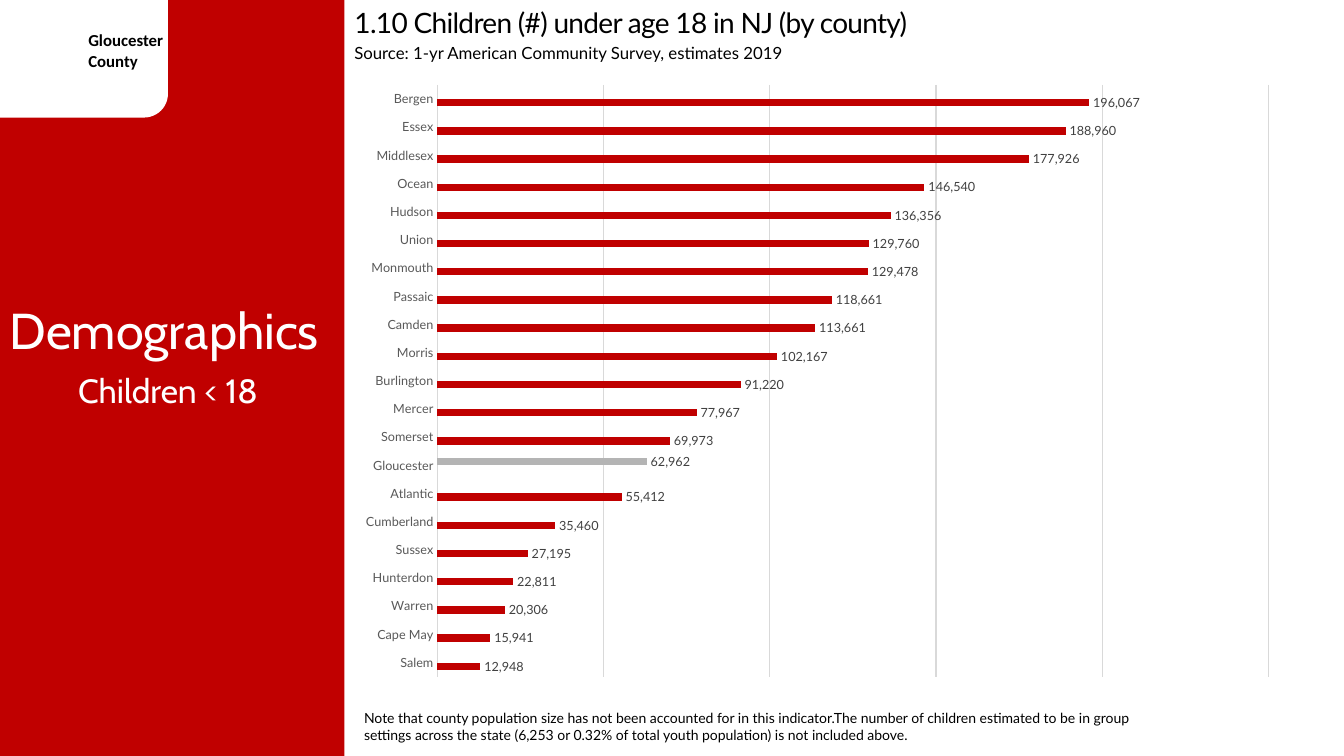
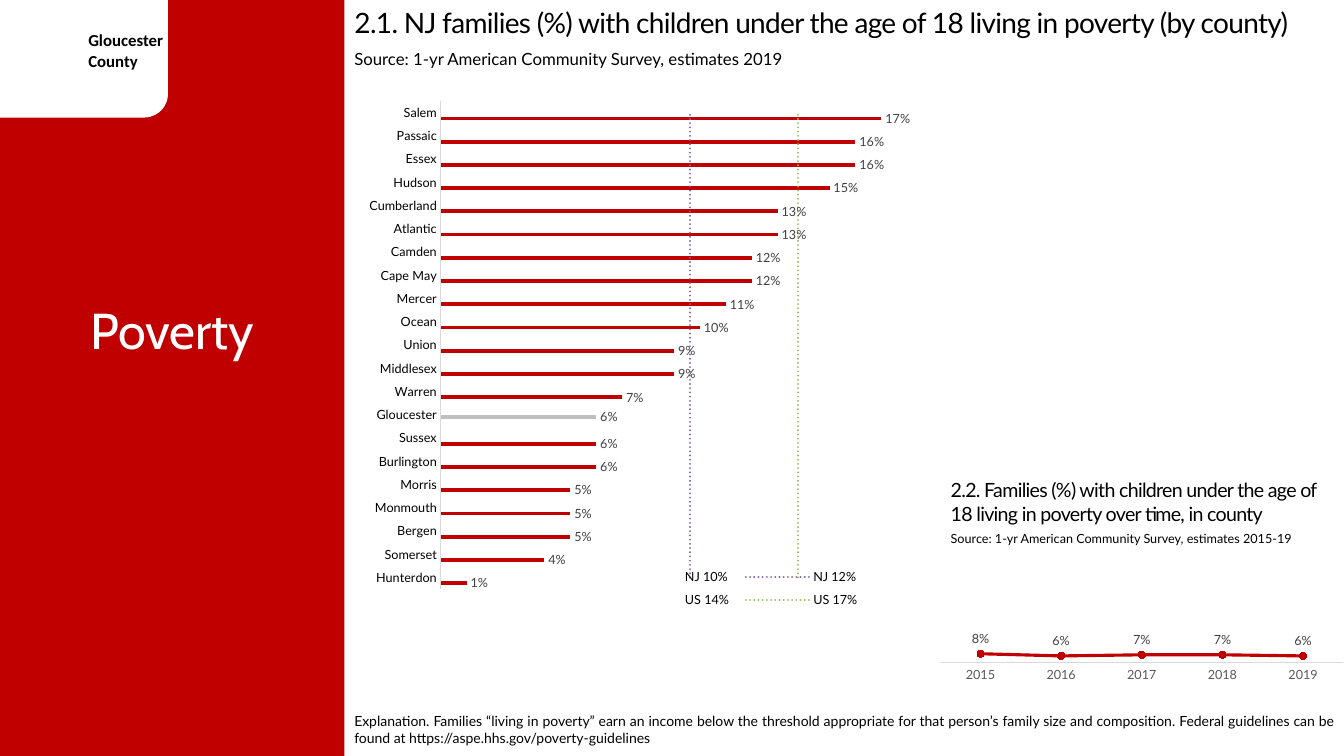
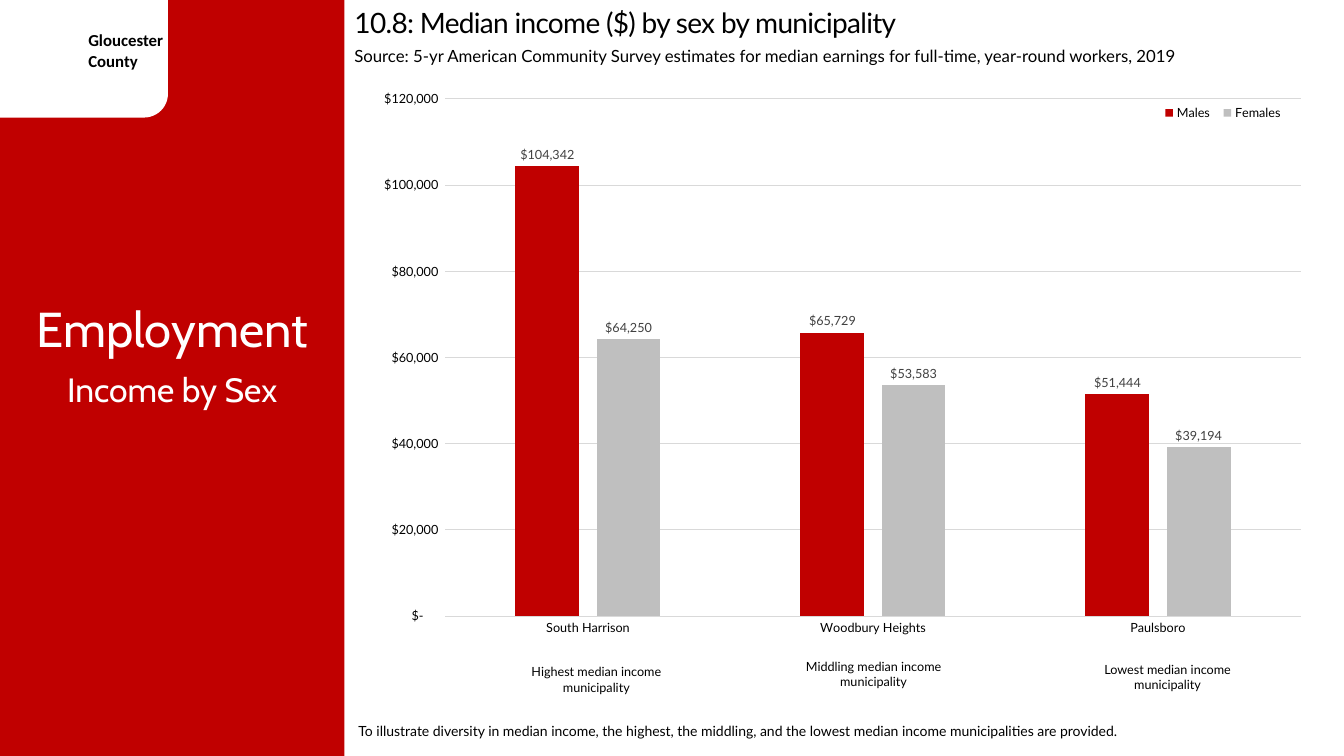
import pptx
import pptx.chart.data
import pptx.dml.color
import pptx.enum.chart
import pptx.enum.shapes
import pptx.enum.text
import pptx.oxml
import pptx.oxml.ns
import pptx.util

Pt = pptx.util.Pt
Kind = pptx.enum.chart.XL_CHART_TYPE
Spot = pptx.enum.chart.XL_LABEL_POSITION
Mark = pptx.enum.chart.XL_TICK_MARK
Form = pptx.enum.shapes.MSO_SHAPE
Align = pptx.enum.text.PP_ALIGN
Anchor = pptx.enum.text.MSO_ANCHOR
qn = pptx.oxml.ns.qn

COLORS = {
    "red": "C00000", "white": "FFFFFF", "black": "000000",
    "gray": "BFBFBF", "silver": "B4B4B4", "rule": "D9D9D9",
    "label": "404040", "axis": "595959", "green": "9BBB59", "purple": "8064A2",
}
MONEY = '_("$"* #,##0_);_("$"* \\(#,##0\\);_("$"* "-"??_);_(@_)'
SIDE = 246


def rgb(name):
    return pptx.dml.color.RGBColor.from_string(COLORS[name])


def xml(text):
    return pptx.oxml.parse_xml(text.replace(">", " " + pptx.oxml.ns.nsdecls("c", "a") + ">", 1))


def layout(box, inner=False):
    """Chart layout element for left, top, width, height as shares of the chart."""
    goal = '<c:layoutTarget val="inner"/>' if inner else ""
    modes = '<c:xMode val="edge"/><c:yMode val="edge"/>'
    sizes = "".join(f'<c:{tag} val="{val}"/>' for tag, val in zip("xywh", box))
    return xml(f"<c:layout><c:manualLayout>{goal}{modes}{sizes}</c:manualLayout></c:layout>")


def clear(node, tag):
    for old in node.findall(qn(tag)):
        node.remove(old)


class Deck:
    def __init__(self):
        self.show = pptx.Presentation()
        self.show.slide_width, self.show.slide_height = Pt(960), Pt(540)
        self.base = self.show.slide_layouts[5]
        self.slide = None

    def page(self, topic, heading, size=36, align=Align.CENTER):
        self.slide = self.show.slides.add_slide(self.base)
        if len(self.show.slides) == 1:
            self.frame()
        self.text(topic, (0, 210, SIDE, 51), size, "Cabin", "white", align)
        title = self.slide.shapes.title
        title.left, title.top, title.width, title.height = map(Pt, (SIDE, 0, 714, 32))
        self.style(title, heading, 20, tight=True)

    def frame(self):
        """Draw the side band and county tab, and move them to the layout."""
        parts = [
            self.shape(Form.RECTANGLE, (0, 0, SIDE, 540), "red"),
            self.shape(Form.ROUNDED_RECTANGLE, (-24, -18, 144, 102), "white"),
            self.text("Gloucester County", (56, 18, 70, 36), 12, "Calibri", bold=True),
        ]
        for num, part in enumerate(parts, 20):
            part._element.nvSpPr.cNvPr.set("id", str(num))
            self.base.shapes._spTree.append(part._element)

    def shape(self, form, box, fill):
        item = self.slide.shapes.add_shape(form, *map(Pt, box))
        item.shadow.inherit = False
        item.fill.solid()
        item.fill.fore_color.rgb = rgb(fill)
        item.line.fill.background()
        return item

    def text(self, words, box, *style, **more):
        item = self.slide.shapes.add_textbox(*map(Pt, box))
        self.style(item, words, *style, **more)
        return item

    def style(self, item, words, size, face="Lato", color="black", align=Align.LEFT,
              anchor=Anchor.TOP, bold=False, tight=False):
        frame = item.text_frame
        frame.word_wrap = True
        frame.auto_size = pptx.enum.text.MSO_AUTO_SIZE.NONE
        frame.vertical_anchor = anchor
        frame.text = words
        para = frame.paragraphs[0]
        para.alignment = align
        self.font(para.font, size, color, face)
        para.font.bold = bold
        if tight:
            para.font._element.set("spc", "-50")

    def font(self, font, size, color, face="Lato"):
        font.size, font.name = Pt(size), face
        font.color.rgb = rgb(color)

    def chart(self, kind, box, cats, rows, plot, top, fmt, ink="black", gap=None, overlap=0):
        """Rows hold name, values and colour; top is the end of the hidden value axis."""
        data = pptx.chart.data.CategoryChartData()
        data.categories = cats
        for name, vals, _ in rows:
            data.add_series(name, vals)
        chart = self.slide.shapes.add_chart(kind, *map(Pt, box), data).chart
        chart.has_title = chart.has_legend = False
        self.font(chart.font, 10, "black", "Calibri")
        area = chart._chartSpace.chart.plotArea
        clear(area, "c:layout")
        area.insert(0, layout(plot, True))
        line = kind == Kind.LINE_MARKERS
        graph = chart.plots[0]
        graph.vary_by_categories = False
        if not line:
            graph.gap_width, graph.overlap = gap, overlap
        for part, (_, _, color) in zip(graph.series, rows):
            if line:
                self.trace(part, color)
            else:
                part.format.fill.solid()
                part.format.fill.fore_color.rgb = rgb(color)
            if color != "white":
                tags = part.data_labels
                tags.show_value = True
                tags.number_format, tags.number_format_is_linked = fmt, False
                tags.position = Spot.ABOVE if line else Spot.OUTSIDE_END
                self.font(tags.font, 9, "label")
        base, scale = chart.category_axis, chart.value_axis
        base.major_tick_mark = scale.major_tick_mark = Mark.NONE
        base.format.line.color.rgb = rgb("rule")
        base.format.line.width = Pt(0.75)
        self.font(base.tick_labels.font, 9, ink)
        scale.minimum_scale, scale.maximum_scale = 0, top
        scale.has_major_gridlines = scale.visible = False
        return chart

    def trace(self, part, color):
        part.smooth = False
        part.format.line.color.rgb = rgb(color)
        part.format.line.width = Pt(2.25)
        part.marker.style = pptx.enum.chart.XL_MARKER_STYLE.CIRCLE
        part.marker.size = 5
        part.marker.format.fill.solid()
        part.marker.format.fill.fore_color.rgb = rgb(color)
        part.marker.format.line.color.rgb = rgb(color)

    def grid(self, axis, step):
        axis.major_unit = step
        axis.has_major_gridlines = True
        axis.major_gridlines.format.line.color.rgb = rgb("rule")
        axis.major_gridlines.format.line.width = Pt(0.75)

    def legend(self, chart, place, box, hide=()):
        chart.has_legend = True
        key = chart.legend
        key.position = place
        key.include_in_layout = False
        self.font(key.font, 9, "black")
        node = key._element
        clear(node, "c:layout")
        spot = node.find(qn("c:legendPos"))
        spot.addnext(layout(box))
        for num in reversed(hide):
            spot.addnext(xml(f'<c:legendEntry><c:idx val="{num}"/>'
                             '<c:delete val="1"/></c:legendEntry>'))

    def trend(self, part, name, color):
        part._element.find(qn("c:cat")).addprevious(xml(
            f'<c:trendline><c:name>{name}</c:name><c:spPr><a:ln w="19050" cap="rnd">'
            f'<a:solidFill><a:srgbClr val="{COLORS[color]}"/></a:solidFill>'
            '<a:prstDash val="sysDot"/></a:ln></c:spPr><c:trendlineType val="linear"/>'
            '<c:dispRSqr val="0"/><c:dispEq val="0"/></c:trendline>'))


def split(pairs, county="Gloucester"):
    """Names, values of the other counties, and values of the one county."""
    names = [name for name, _ in pairs]
    rest = [None if name == county else val for name, val in pairs]
    own = [val if name == county else None for name, val in pairs]
    return names, rest, own


def children(deck):
    deck.page("Demographics", "1.10 Children (#) under age 18 in NJ (by county)",
              align=Align.LEFT)
    deck.text("Source: 1-yr American Community Survey, estimates 2019", (SIDE, 27, 508, 22), 12)
    deck.text("Children < 18", (22, 261, 196, 36), 24, "Cabin", "white", Align.CENTER)
    names, rest, own = split([
        ("Salem", 12948), ("Cape May", 15941), ("Warren", 20306), ("Hunterdon", 22811),
        ("Sussex", 27195), ("Cumberland", 35460), ("Atlantic", 55412), ("Gloucester", 62962),
        ("Somerset", 69973), ("Mercer", 77967), ("Burlington", 91220), ("Morris", 102167),
        ("Camden", 113661), ("Passaic", 118661), ("Monmouth", 129478), ("Union", 129760),
        ("Hudson", 136356), ("Ocean", 146540), ("Middlesex", 177926), ("Essex", 188960),
        ("Bergen", 196067)])
    chart = deck.chart(
        Kind.BAR_CLUSTERED, (253, 57.5, 682.5, 456), names,
        [("Series 1", rest, "red"), ("Series 2", own, "silver")],
        (0.087, 0.007, 0.87, 0.927), 250000, "#,##0", "axis", 182)
    deck.grid(chart.value_axis, 50000)
    deck.text("Note that county population size has not been accounted for in this indicator."
              "The number of children estimated to be in group settings across the state "
              "(6,253 or 0.32% of total youth population) is not included above.",
              (253, 503, 576, 32), 10)


def poverty(deck):
    deck.page("Poverty", "2.1. NJ families (%) with children under the age of 18 "
              "living in poverty (by county)")
    deck.text("Source: 1-yr American Community Survey, estimates 2019", (SIDE, 31, 508, 22), 12)
    deck.text("Explanation. Families “living in poverty” earn an income below the threshold "
              "appropriate for that person’s family size and composition. Federal guidelines "
              "can be found at https://aspe.hhs.gov/poverty-guidelines",
              (SIDE, 503, 714, 36), 10, align=Align.JUSTIFY, anchor=Anchor.MIDDLE)
    deck.text("2.2. Families (%) with children under the age of 18 living in poverty "
              "over time, in county", (672, 338, 282, 58), 14, tight=True)
    deck.text("Source: 1-yr American Community Survey, estimates 2015-19",
              (672, 376, 288, 18), 9)
    names, rest, own = split([
        ("Hunterdon", 0.01), ("Somerset", 0.04), ("Bergen", 0.05), ("Monmouth", 0.05),
        ("Morris", 0.05), ("Burlington", 0.06), ("Sussex", 0.06), ("Gloucester", 0.06),
        ("Warren", 0.07), ("Middlesex", 0.09), ("Union", 0.09), ("Ocean", 0.1),
        ("Mercer", 0.11), ("Cape May", 0.12), ("Camden", 0.12), ("Atlantic", 0.13),
        ("Cumberland", 0.13), ("Hudson", 0.15), ("Essex", 0.16), ("Passaic", 0.16),
        ("Salem", 0.17)])
    count = len(names)
    chart = deck.chart(
        Kind.BAR_CLUSTERED, (248.5, 60.5, 592, 421), names,
        [("Poverty Rate", rest, "red"), ("County", own, "gray"),
         ("US 14%", [0.138] * count, "white"), ("NJ 10%", [0.096] * count, "white")],
        (0.112, 0.028, 0.782, 0.828), 0.25, "0%", gap=219)
    bars = chart.plots[0].series
    deck.trend(bars[2], "US 17%", "green")
    deck.trend(bars[3], "NJ 12%", "purple")
    deck.legend(chart, pptx.enum.chart.XL_LEGEND_POSITION.RIGHT,
                (0.31, 0.81, 0.32, 0.09), (2, 3, 4, 5))
    deck.chart(
        Kind.LINE_MARKERS, (666, 384, 294, 111.5), [str(year) for year in range(2015, 2020)],
        [("Series 1", [0.08, 0.06, 0.07, 0.07, 0.06], "red")],
        (0.019, 0.099, 0.981, 0.702), 1, "0%", "axis")


def income(deck):
    deck.page("Employment", "10.8: Median income ($) by sex by municipality", 35)
    deck.text("Income by Sex", (0, 260, SIDE, 36), 24, "Cabin", "white", Align.CENTER)
    deck.text("Source: 5-yr American Community Survey estimates for median earnings for "
              "full-time, year-round workers, 2019", (SIDE, 29, 662, 22), 12)
    deck.text("To illustrate diversity in median income, the highest, the middling, and the "
              "lowest median income municipalities are provided.",
              (249, 504, 648, 36), 10, align=Align.JUSTIFY, anchor=Anchor.MIDDLE)
    for rank, left, top in (("Highest", 354, 471), ("Middling", 552, 467), ("Lowest", 762, 469)):
        deck.text(f"{rank} median income municipality", (left, top, 144, 29), 9,
                  align=Align.CENTER)
    chart = deck.chart(
        Kind.COLUMN_CLUSTERED, (258, 57, 684, 428.5),
        ["South Harrison", "Woodbury Heights", "Paulsboro"],
        [("Males", [104342, 65729, 51444], "red"), ("Females", [64250, 53583, 39194], "gray")],
        (0.088, 0.032, 0.893, 0.862), 120000, MONEY, gap=219, overlap=-27)
    axis = chart.value_axis
    axis.visible = True
    axis.format.line.fill.background()
    axis.tick_labels.number_format = MONEY
    axis.tick_labels.number_format_is_linked = False
    deck.font(axis.tick_labels.font, 9, "black")
    deck.grid(axis, 20000)
    deck.legend(chart, pptx.enum.chart.XL_LEGEND_POSITION.BOTTOM, (0.83, 0.03, 0.14, 0.05))


def main():
    deck = Deck()
    for draw in (children, poverty, income):
        draw(deck)
    deck.show.save("out.pptx")


if __name__ == "__main__":
    main()
